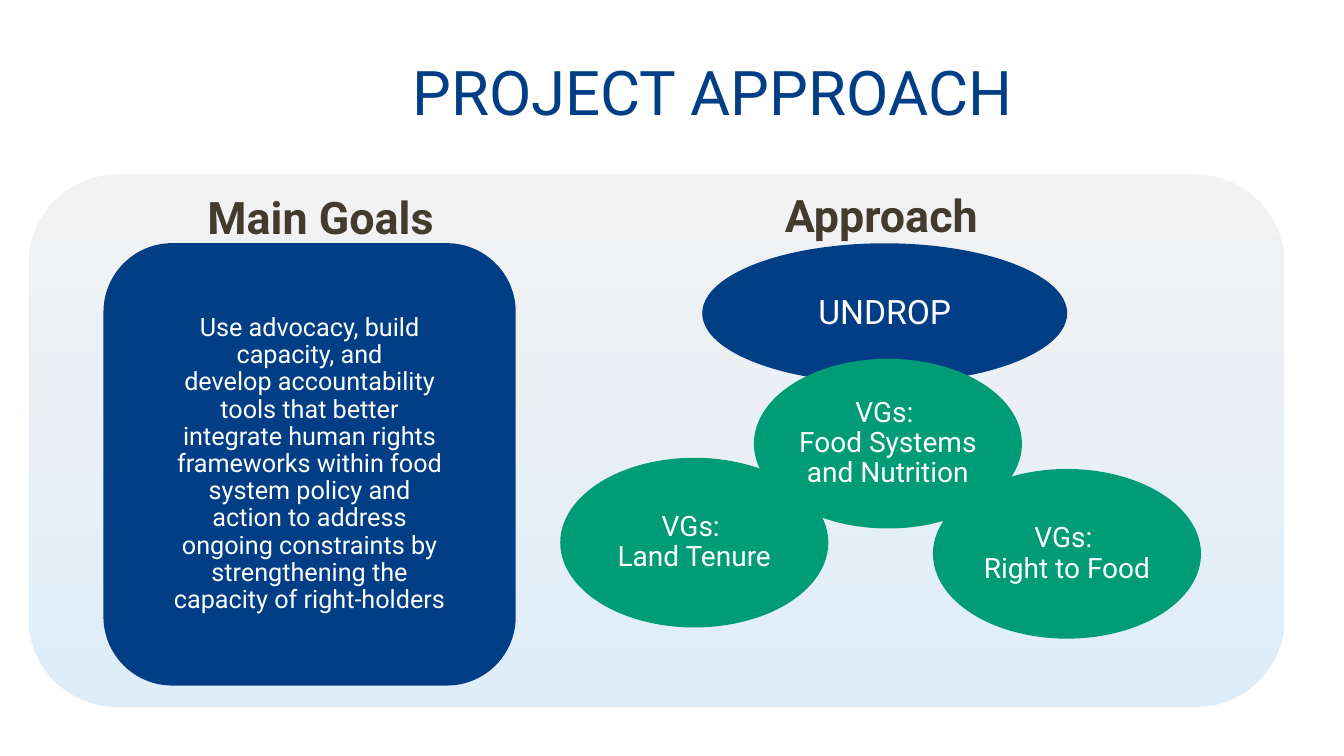
"""Build the project approach slide with its main goals and guideline ovals."""
from dataclasses import dataclass

from pptx import Presentation
from pptx.dml.color import RGBColor
from pptx.enum.shapes import MSO_SHAPE
from pptx.enum.text import MSO_ANCHOR, PP_ALIGN
from pptx.shapes.autoshape import Shape
from pptx.slide import Slide
from pptx.util import Pt

COLORS = {
    "navy": "023E85",
    "green": "009B77",
    "brown": "433C2E",
    "white": "FFFFFF",
    "panel_top": "F2F2F2",
    "panel_bottom": "DFEDF9",
}
FONT = "Roboto"
CORNER = 0.167
GUIDELINE_SIZE = (191.5, 121.2)
HARD_SPACE = chr(160)


@dataclass(frozen=True)
class Box:
    left: float
    top: float
    width: float
    height: float


@dataclass(frozen=True)
class Label:
    lines: tuple[str, ...]
    size: float
    color: str = "white"
    bold: bool = False
    inset_x: float = 7.2
    inset_y: float = 3.6
    anchor: MSO_ANCHOR = MSO_ANCHOR.MIDDLE
    spacing: float = 0.9


@dataclass(frozen=True)
class Figure:
    kind: MSO_SHAPE
    box: Box
    fill: str
    label: Label


def rgb(name: str) -> RGBColor:
    return RGBColor.from_string(COLORS[name])


def lengths(box: Box) -> tuple[Pt, Pt, Pt, Pt]:
    return Pt(box.left), Pt(box.top), Pt(box.width), Pt(box.height)


def write_label(shape: Shape, label: Label) -> None:
    frame = shape.text_frame
    frame.word_wrap = True
    frame.vertical_anchor = label.anchor
    frame.margin_left = frame.margin_right = Pt(label.inset_x)
    frame.margin_top = frame.margin_bottom = Pt(label.inset_y)
    frame.text = "\n".join(label.lines)
    for paragraph in frame.paragraphs:
        paragraph.alignment = PP_ALIGN.CENTER
        paragraph.line_spacing = label.spacing
        paragraph.font.name = FONT
        paragraph.font.size = Pt(label.size)
        paragraph.font.bold = label.bold
        paragraph.font.color.rgb = rgb(label.color)


def add_text(slide: Slide, box: Box, label: Label) -> None:
    write_label(slide.shapes.add_textbox(*lengths(box)), label)


def add_plain_shape(slide: Slide, kind: MSO_SHAPE, box: Box) -> Shape:
    shape = slide.shapes.add_shape(kind, *lengths(box))
    shape.shadow.inherit = False
    shape.line.fill.background()
    if kind == MSO_SHAPE.ROUNDED_RECTANGLE:
        shape.adjustments[0] = CORNER
    return shape


def add_panel(slide: Slide, box: Box) -> None:
    panel = add_plain_shape(slide, MSO_SHAPE.ROUNDED_RECTANGLE, box)
    panel.fill.gradient()
    panel.fill.gradient_angle = 270
    stops = panel.fill.gradient_stops
    for stop, position, color in zip(stops, (0, 1), ("panel_top", "panel_bottom")):
        stop.position = position
        stop.color.rgb = rgb(color)


def add_figure(slide: Slide, figure: Figure) -> None:
    shape = add_plain_shape(slide, figure.kind, figure.box)
    shape.fill.solid()
    shape.fill.fore_color.rgb = rgb(figure.fill)
    write_label(shape, figure.label)


def guideline(left: float, top: float, topic: str) -> Figure:
    label = Label(("VGs: ", topic), 20, inset_x=3, inset_y=13)
    return Figure(MSO_SHAPE.OVAL, Box(left, top, *GUIDELINE_SIZE), "green", label)


def heading(text: str) -> Label:
    return Label((text,), 32, "brown", True, anchor=MSO_ANCHOR.TOP, spacing=1.0)


GOAL = (
    f"Use advocacy, build capacity, and develop{HARD_SPACE}accountability tools "
    f"that better integrate human rights frameworks{HARD_SPACE}within food system "
    "policy and action to address ongoing constraints by strengthening the "
    "capacity of right-holders"
)
TITLE = Figure(
    MSO_SHAPE.RECTANGLE,
    Box(192.7, 21.6, 632.9, 93.6),
    "white",
    Label(("PROJECT APPROACH",), 44, "navy", inset_x=14.4, inset_y=14.4),
)
HEADINGS = (
    (Box(89.8, 131.8, 278.6, 46), heading("Main Goals")),
    (Box(490.3, 130.7, 278.6, 46), heading("Approach")),
)
GOAL_CARD = Figure(
    MSO_SHAPE.ROUNDED_RECTANGLE,
    Box(73.9, 173.7, 294.5, 316),
    "navy",
    Label((GOAL,), 18, inset_x=35.5, inset_y=36),
)
OVALS = (
    Figure(
        MSO_SHAPE.OVAL,
        Box(501.6, 173.8, 260.7, 100),
        "navy",
        Label(("UNDROP",), 24),
    ),
    guideline(400.2, 327, "Land Tenure"),
    guideline(538.5, 256.3, "Food Systems and Nutrition"),
    guideline(666.4, 335, "Right to Food"),
)


def main() -> None:
    presentation = Presentation()
    presentation.slide_width = Pt(960)
    presentation.slide_height = Pt(540)
    slide = presentation.slides.add_slide(presentation.slide_layouts[6])
    add_figure(slide, TITLE)
    add_panel(slide, Box(20.5, 124.6, 897.1, 380.2))
    add_figure(slide, GOAL_CARD)
    for box, label in HEADINGS:
        add_text(slide, box, label)
    for oval in OVALS:
        add_figure(slide, oval)
    presentation.save("out.pptx")


if __name__ == "__main__":
    main()
